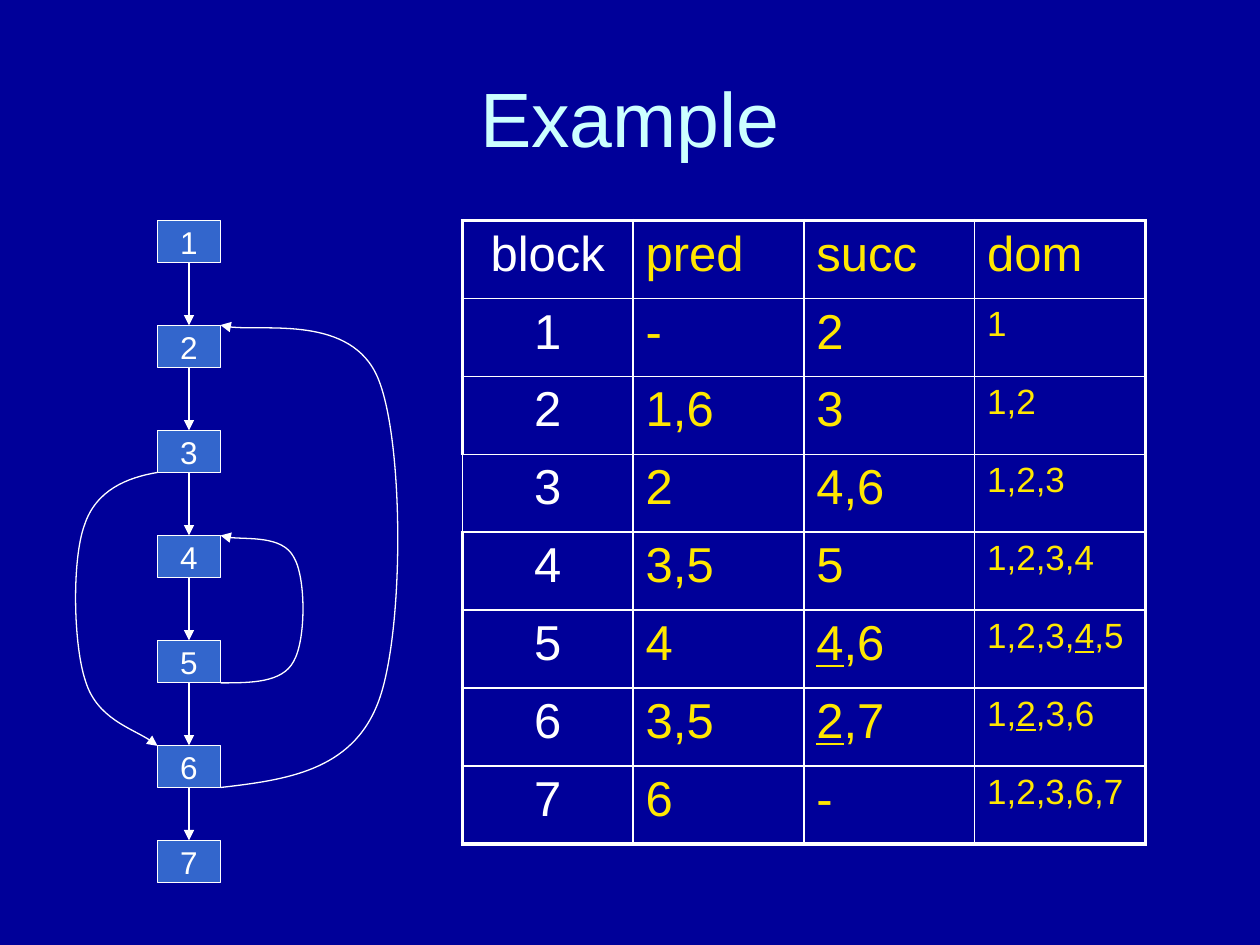
from dataclasses import dataclass

from lxml.etree import SubElement
from pptx import Presentation
from pptx.dml.color import RGBColor
from pptx.enum.shapes import MSO_CONNECTOR, MSO_SHAPE
from pptx.enum.text import MSO_ANCHOR, PP_ALIGN
from pptx.oxml import parse_xml
from pptx.oxml.ns import nsdecls, qn
from pptx.util import Inches, Pt

FONT = "Arial"
HEX = {
    "back": "000099",
    "title": "CCFFFF",
    "node": "3366CC",
    "white": "FFFFFF",
    "gold": "FFE701",
}


@dataclass
class Node:
    label: str
    top: float


@dataclass
class Curve:
    start: tuple[float, float]
    points: list[tuple[float, float]]


NODES = [Node(str(i + 1), 1.75 + i * 5 / 6) for i in range(6)] + [Node("7", 6.67)]

CURVES = [
    Curve((1.25, 3.75), [
        (1.01, 3.79), (0.76, 3.89), (0.67, 4.17),
        (0.57, 4.44), (0.58, 5.12), (0.68, 5.41),
        (0.77, 5.7), (1.13, 5.81), (1.25, 5.92),
    ]),
    Curve((1.75, 5.42), [
        (1.99, 5.42), (2.24, 5.42), (2.33, 5.25),
        (2.43, 5.08), (2.43, 4.58), (2.33, 4.42),
        (2.24, 4.25), (1.82, 4.29), (1.75, 4.25),
    ]),
    Curve((1.75, 6.25), [
        (2.27, 6.19), (2.79, 6.12), (3, 5.58),
        (3.21, 5.04), (3.21, 3.5), (3, 3),
        (2.79, 2.5), (1.96, 2.65), (1.75, 2.58),
    ]),
]

ROWS = [
    ("block", "pred", "succ", "dom"),
    ("1", "-", "2", "1"),
    ("2", "1,6", "3", "1,2"),
    ("3", "2", "4,6", "1,2,3"),
    ("4", "3,5", "5", "1,2,3,4"),
    ("5", "4", "_4_,6", "1,2,3,_4_,5"),
    ("6", "3,5", "_2_,7", "1,_2_,3,6"),
    ("7", "6", "-", "1,2,3,6,7"),
]


def paint(name: str) -> RGBColor:
    return RGBColor.from_string(HEX[name])


def style(para, size: float, color: str, align=PP_ALIGN.CENTER) -> None:
    para.alignment = align
    for run in para.runs:
        run.font.name = FONT
        run.font.size = Pt(size)
        run.font.color.rgb = paint(color)


def stroke(line) -> None:
    line.color.rgb = paint("white")
    line.width = Pt(0.75)


def arrow(shape) -> None:
    stroke(shape.line)
    SubElement(shape.line._get_or_add_ln(), qn("a:tailEnd"), type="triangle")


def add_title(slide, text: str) -> None:
    box = slide.shapes.add_textbox(Inches(0.5), Inches(0.3), Inches(9), Inches(1.25))
    frame = box.text_frame
    frame.word_wrap = True
    frame.vertical_anchor = MSO_ANCHOR.MIDDLE
    frame.text = text
    style(frame.paragraphs[0], 44, "title")


def add_node(slide, node: Node):
    box = slide.shapes.add_shape(
        MSO_SHAPE.RECTANGLE, Inches(1.25), Inches(node.top), Inches(0.5), Inches(1 / 3))
    box.shadow.inherit = False
    box.fill.solid()
    box.fill.fore_color.rgb = paint("node")
    stroke(box.line)
    frame = box.text_frame
    frame.word_wrap = False
    frame.vertical_anchor = MSO_ANCHOR.MIDDLE
    frame.text = node.label
    style(frame.paragraphs[0], 18, "white")
    return box


def add_link(slide, upper, lower) -> None:
    link = slide.shapes.add_connector(MSO_CONNECTOR.STRAIGHT, 0, 0, 0, 0)
    link.begin_connect(upper, 2)
    link.end_connect(lower, 0)
    arrow(link)
    SubElement(link._element.spPr, qn("a:effectLst"))


def add_curve(slide, curve: Curve) -> None:
    pen = slide.shapes.build_freeform(
        Inches(curve.start[0]), Inches(curve.start[1]))
    pen.add_line_segments([(Inches(x), Inches(y)) for x, y in curve.points], close=False)
    shape = pen.convert_to_shape()
    lines = list(shape._element.iter(qn("a:lnTo")))
    route = lines[0].getparent()
    for i in range(0, len(lines), 3):
        bend = SubElement(route, qn("a:cubicBezTo"))
        for line in lines[i:i + 3]:
            bend.append(line[0])
            route.remove(line)
    shape.shadow.inherit = False
    shape.fill.background()
    arrow(shape)


def add_edge(cell, index: int, side: str, width: float) -> None:
    cell._tc.get_or_add_tcPr().insert(index, parse_xml(
        f'<a:ln{side} {nsdecls("a")} w="{Pt(width)}"><a:solidFill>'
        f'<a:srgbClr val="{HEX["white"]}"/></a:solidFill></a:ln{side}>'))


def fill_cell(cell, text: str, row: int, col: int) -> None:
    para = cell.text_frame.paragraphs[0]
    for i, part in enumerate(text.split("_")):
        if part:
            run = para.add_run()
            run.text = part
            if i % 2:
                run.font.underline = True
    size = 20 if row and col == 3 else 28
    if col:
        style(para, size, "gold", PP_ALIGN.LEFT)
    else:
        style(para, size, "white")
    cell.fill.background()
    outer = {
        "L": col == 0 and row != 3,
        "R": col == len(ROWS[0]) - 1,
        "T": row == 0,
        "B": row == len(ROWS) - 1,
    }
    for i, (side, thick) in enumerate(outer.items()):
        add_edge(cell, i, side, 2.25 if thick else 1)


def add_grid(slide) -> None:
    grid = slide.shapes.add_table(
        len(ROWS), len(ROWS[0]),
        Inches(3.67), Inches(1.75), Inches(5.42), Inches(4.95)).table
    grid.first_row = False
    grid.horz_banding = False
    for r, row in enumerate(ROWS):
        for c, text in enumerate(row):
            fill_cell(grid.cell(r, c), text, r, c)


def main() -> None:
    deck = Presentation()
    deck.slide_width, deck.slide_height = Inches(10), Inches(7.5)
    slide = deck.slides.add_slide(deck.slide_layouts[6])
    slide.background.fill.solid()
    slide.background.fill.fore_color.rgb = paint("back")
    add_title(slide, "Example")
    boxes = [add_node(slide, node) for node in NODES]
    for upper, lower in zip(boxes, boxes[1:]):
        add_link(slide, upper, lower)
    for curve in CURVES:
        add_curve(slide, curve)
    add_grid(slide)
    deck.save("out.pptx")


if __name__ == "__main__":
    main()
